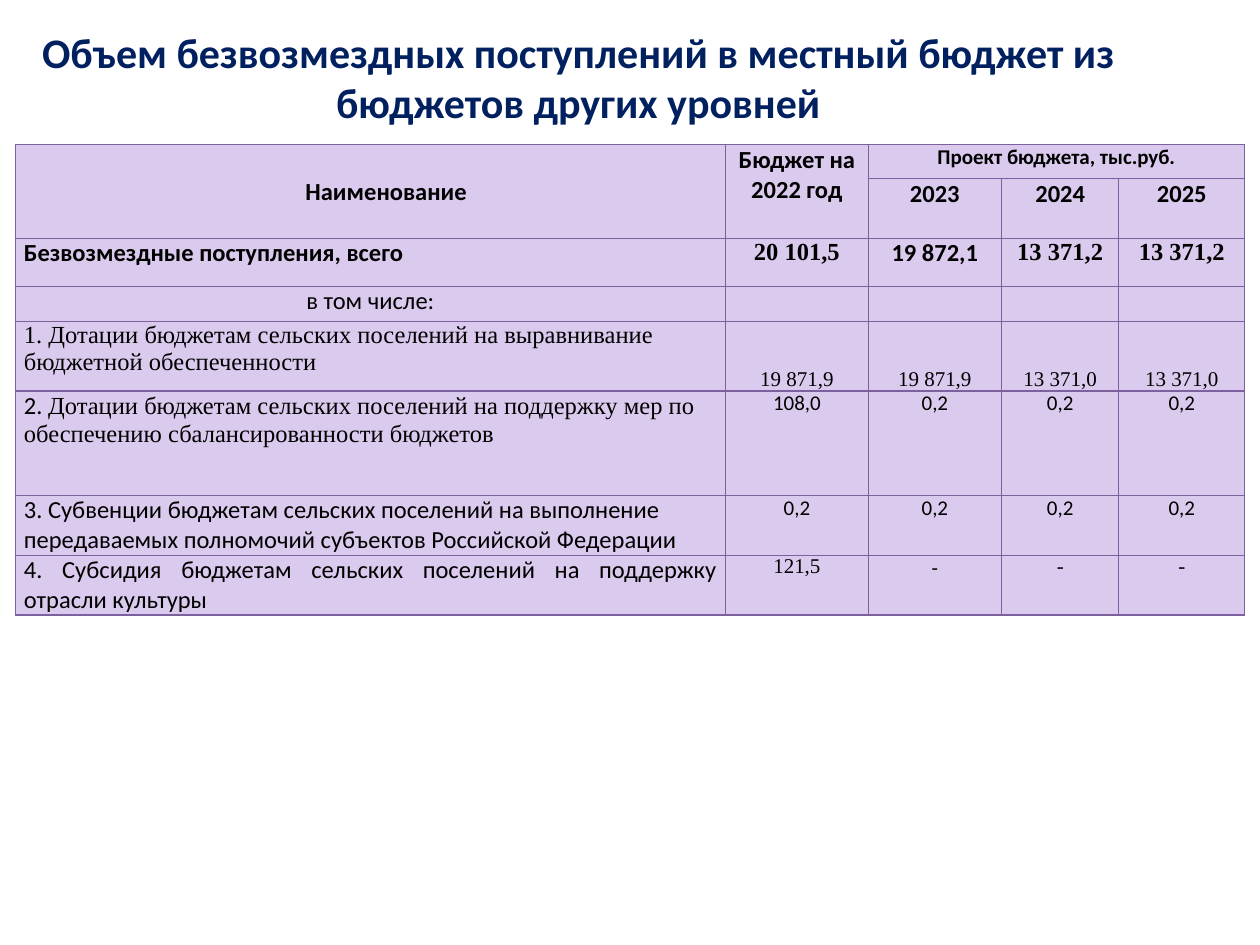
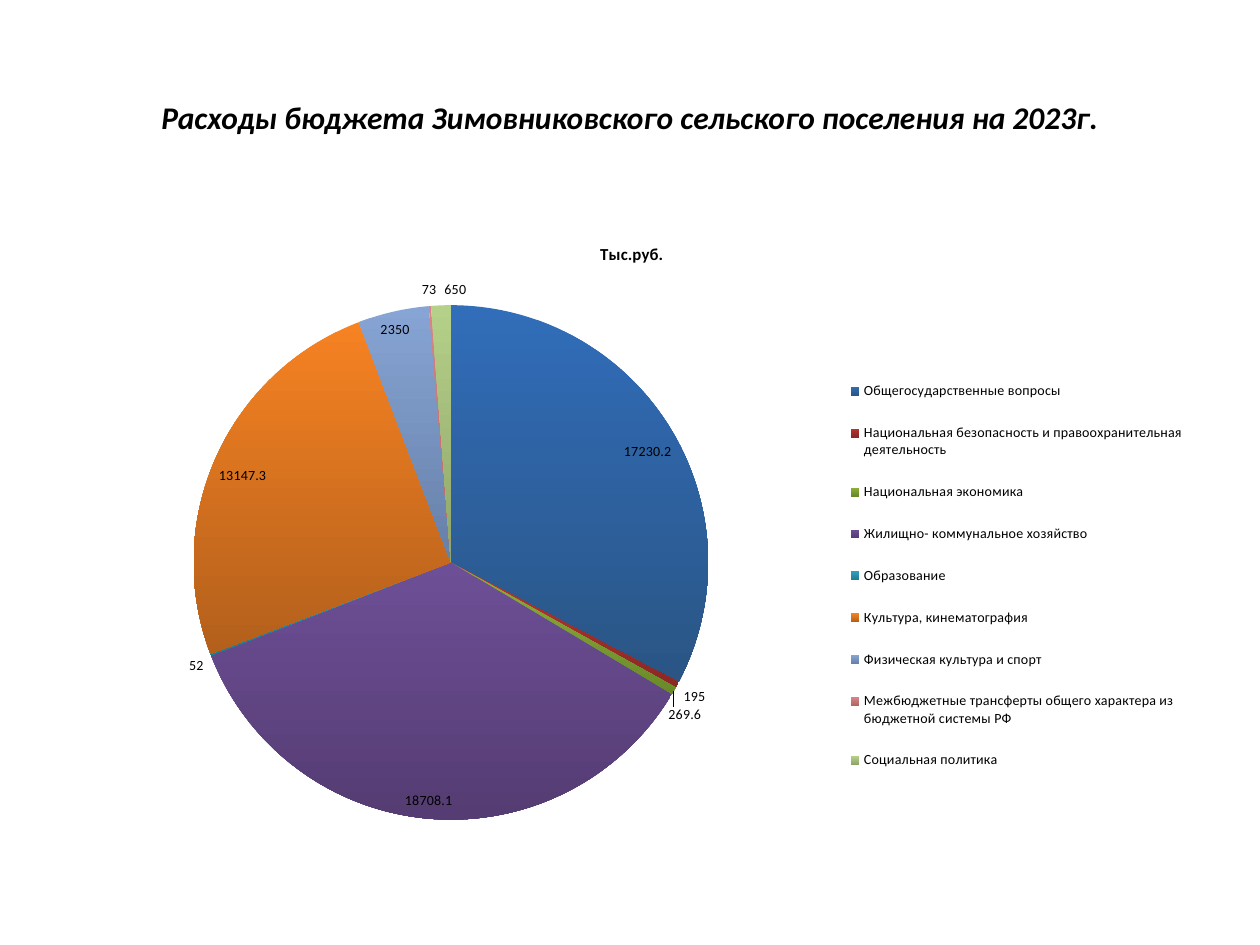
from lxml import etree
from pptx import Presentation
from pptx import util as u
from pptx.chart.data import CategoryChartData
from pptx.dml.color import RGBColor
from pptx.enum import chart as ch, text as tx
from pptx.oxml import parse_xml
from pptx.oxml.ns import nsdecls, qn

NAVY, BLACK, LILAC, VIOLET = "002060", "000000", "DACAED", "7D60A0"
SANS, SERIF = "Calibri", "Times New Roman"
LEFT, CENTER, JUSTIFY = tx.PP_ALIGN.LEFT, tx.PP_ALIGN.CENTER, tx.PP_ALIGN.JUSTIFY
TOP, MIDDLE, BOTTOM = tx.MSO_ANCHOR.TOP, tx.MSO_ANCHOR.MIDDLE, tx.MSO_ANCHOR.BOTTOM


def write(paragraph, words, size=12, font=SANS, color=BLACK, bold=False, italic=False, align=CENTER):
    paragraph.alignment = align
    run = paragraph.add_run()
    run.text = words
    run.font.size, run.font.name = u.Pt(size), font
    run.font.bold, run.font.italic = bold, italic
    run.font.color.rgb = RGBColor.from_string(color)


def place(part, index, **fractions):
    """Give a chart part a manual layout, as fractions of the chart, at a child index."""
    for old in part.findall(qn("c:layout")):
        part.remove(old)
    layout = parse_xml(f"<c:layout {nsdecls('c')}><c:manualLayout/></c:layout>")
    settings = {"xMode": "edge", "yMode": "edge", **fractions}
    if part.tag == qn("c:plotArea"):
        settings = {"layoutTarget": "inner", **settings}
    for tag, value in settings.items():
        etree.SubElement(layout[0], qn(f"c:{tag}")).set("val", str(value))
    part.insert(index, layout)


prs = Presentation()
prs.slide_width, prs.slide_height = u.Inches(10), u.Inches(7.5)

# Both slides: a title across the top
headings = [
    ("Объем безвозмездных поступлений в местный бюджет из бюджетов других уровней",
     (0.09, 0.21, 9, 1.01), TOP, dict(size=24, color=NAVY)),
    ("Расходы бюджета Зимовниковского сельского поселения на 2023г.",
     (0.5, 0.3, 9, 1.25), MIDDLE, dict(size=18, italic=True)),
]
slides = []
for heading, box, anchor, style in headings:
    slide = prs.slides.add_slide(prs.slide_layouts[5])
    title = slide.shapes.title
    title.left, title.top, title.width, title.height = map(u.Inches, box)
    frame = title.text_frame
    frame.word_wrap, frame.vertical_anchor = True, anchor
    frame.margin_top = frame.margin_bottom = 0
    write(frame.paragraphs[0], heading, bold=True, **style)
    slides.append(slide)
transfers_slide, spending_slide = slides

# Transfers table
columns = [5.64, 1.13, 1.06, 0.93, 1]
rows = [0.27, 0.28, 0.38, 0.27, 0.55, 0.83, 0.42, 0.42]
transfers = transfers_slide.shapes.add_table(
    len(rows), len(columns), *map(u.Inches, (0.12, 1.15, 9.76, 3.56))).table
for column, width in zip(transfers.columns, columns):
    column.width = u.Inches(width)
for row, height in zip(transfers.rows, rows):
    row.height = u.Inches(height)

for cell in transfers.iter_cells():
    properties = cell._tc.get_or_add_tcPr()
    for side in ("lnL", "lnR", "lnT", "lnB"):
        properties.append(parse_xml(
            f'<a:{side} {nsdecls("a")} w="9525"><a:solidFill><a:srgbClr val="{VIOLET}"/>'
            f"</a:solidFill></a:{side}>"))
    cell.fill.solid()
    cell.fill.fore_color.rgb = RGBColor.from_string(LILAC)
    cell.margin_left = cell.margin_right = u.Inches(0.07)
    cell.margin_top = cell.margin_bottom = 0

for first, last in [((0, 0), (1, 0)), ((0, 1), (1, 1)), ((0, 2), (0, 4))]:
    transfers.cell(*first).merge(transfers.cell(*last))

head = dict(size=14, bold=True)
for (row, column), words, style in [
    ((0, 0), "Наименование", head),
    ((0, 1), "Бюджет на 2022 год", head),
    ((0, 2), "Проект бюджета, тыс.руб.", dict(size=12, bold=True)),
    ((1, 2), "2023", head),
    ((1, 3), "2024", head),
    ((1, 4), "2025", head),
]:
    write(transfers.cell(row, column).text_frame.paragraphs[0], words, **style)
name_head = transfers.cell(0, 0)
name_head.vertical_anchor = MIDDLE
name_head.margin_left = u.Inches(0.32)

# Each row: name pieces with fonts, name alignment, amounts, amount fonts, amount style
body = [
    ([("Безвозмездные поступления, всего", SANS)], LEFT,
     ["20 101,5", "19 872,1", "13 371,2", "13 371,2"], [SERIF, SANS, SERIF, SERIF], head),
    ([("в том числе:", SANS)], CENTER, [""] * 4, [SANS] * 4, {}),
    ([("1. Дотации бюджетам сельских поселений на выравнивание бюджетной обеспеченности", SERIF)], LEFT,
     ["19 871,9", "19 871,9", "13 371,0", "13 371,0"], [SERIF] * 4, {}),
    ([("2. ", SANS), ("Дотации бюджетам сельских поселений на поддержку мер по обеспечению "
                      "сбалансированности бюджетов", SERIF)], LEFT,
     ["108,0", "0,2", "0,2", "0,2"], [SANS] * 4, {}),
    ([("3. Субвенции бюджетам сельских поселений на выполнение передаваемых полномочий "
       "субъектов Российской Федерации", SANS)], LEFT,
     ["0,2"] * 4, [SANS] * 4, {}),
    ([("4. Субсидия бюджетам сельских поселений на поддержку отрасли культуры", SANS)], JUSTIFY,
     ["121,5", "-", "-", "-"], [SERIF, SANS, SERIF, SERIF], {}),
]
for row, (name, align, amounts, fonts, style) in enumerate(body, start=2):
    for words, font in name:
        write(transfers.cell(row, 0).text_frame.paragraphs[0], words, size=14, font=font,
              bold=style is head, align=align)
    for column, (amount, font) in enumerate(zip(amounts, fonts), start=1):
        write(transfers.cell(row, column).text_frame.paragraphs[0], amount, font=font, **style)
for column in range(1, 5):
    transfers.cell(4, column).vertical_anchor = BOTTOM

# Spending pie: name, amount, top and bottom colour of the slice
spending = [
    ("Общегосударственные вопросы", 17230.2, "316DB9", "2A5585"),
    ("Национальная безопасность и правоохранительная деятельность", 195, "B83531", "8A2825"),
    ("Национальная экономика", 269.6, "8FB03C", "6A8A2A"),
    ("Жилищно- коммунальное хозяйство", 18708.1, "6D4F97", "553C72"),
    ("Образование", 52, "2FA0BC", "237A90"),
    ("Культура, кинематография", 13147.3, "F68222", "B3601C"),
    ("Физическая культура и спорт", 2350, "86A4D4", "6780A8"),
    ("Межбюджетные трансферты общего характера из бюджетной системы РФ", 73, "DA8486", "B06668"),
    ("Социальная политика", 650, "B5D088", "8FA56B"),
]
data = CategoryChartData()
data.categories = [section[0] for section in spending]
data.add_series("Тыс.руб.", [section[1] for section in spending])
pie = spending_slide.shapes.add_chart(
    ch.XL_CHART_TYPE.PIE, *map(u.Inches, (0.51, 1.7, 9, 4.95)), data).chart
pie.font.size, pie.font.name = u.Pt(8), SANS
pie.font.color.rgb = RGBColor.from_string(BLACK)
pie.has_title = True
write(pie.chart_title.text_frame.paragraphs[0], "Тыс.руб.", size=9.6, bold=True)
pie.has_legend = True
pie.legend.position = ch.XL_LEGEND_POSITION.RIGHT
pie.legend.include_in_layout = False

plot = pie.plots[0]
plot.vary_by_categories = True
plot.has_data_labels = True
plot.data_labels.show_value = True
plot.data_labels.show_percentage = False
plot.data_labels.position = ch.XL_LABEL_POSITION.BEST_FIT
for index, (_, _, *shades) in enumerate(spending):
    fill = plot.series[0].points[index].format.fill
    fill.gradient()
    fill.gradient_angle = 270
    for stop, shade in zip(fill.gradient_stops, shades):
        stop.color.rgb = RGBColor.from_string(shade)

chart_xml = pie._chartSpace.find(qn("c:chart"))
place(chart_xml.find(qn("c:title")), 1, x=0.47, y=0.04)
place(chart_xml.find(qn("c:plotArea")), 0, x=0.114, y=0.146, w=0.454, h=0.825)
place(chart_xml.find(qn("c:legend")), 1, x=0.69, y=0.23, w=0.3, h=0.7)

prs.save("out.pptx")
